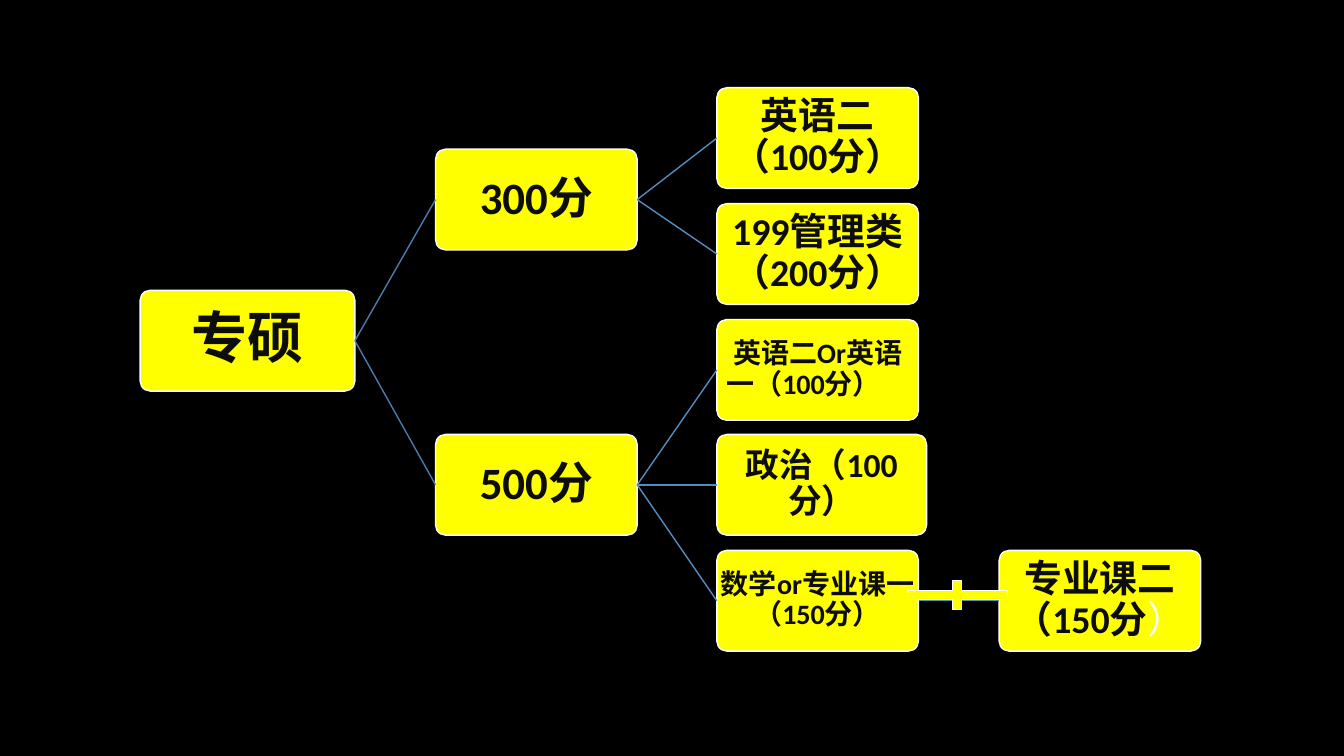
"""Score tree of the professional master's entrance examination."""
from lxml import etree
from pptx import Presentation
from pptx.dml.color import RGBColor
from pptx.enum.shapes import MSO_CONNECTOR, MSO_SHAPE
from pptx.enum.text import MSO_ANCHOR, PP_ALIGN
from pptx.oxml.ns import qn
from pptx.util import Inches, Pt

ROUNDED, PLUS = MSO_SHAPE.ROUNDED_RECTANGLE, MSO_SHAPE.MATH_PLUS
STRAIGHT = MSO_CONNECTOR.STRAIGHT
MIDDLE, CENTER = MSO_ANCHOR.MIDDLE, PP_ALIGN.CENTER
LEFT_SIDE, RIGHT_SIDE = 1, 3

BLACK = RGBColor(0x00, 0x00, 0x00)
INK = RGBColor(0x0D, 0x0D, 0x0D)
WHITE = RGBColor(0xFF, 0xFF, 0xFF)
YELLOW = RGBColor(0xFF, 0xFF, 0x00)
DARK_BLUE = RGBColor(0x49, 0x7C, 0xAB)
BLUE = RGBColor(0x53, 0x8D, 0xC1)

COLUMNS = [1.39, 4.32, 7.11, 9.91]
BOX_HEIGHT = 1


def add_yellow_shape(kind, left, top, width, height, line_width):
    sp = slide.shapes.add_shape(
        kind, Inches(left), Inches(top), Inches(width), Inches(height))
    sp.shadow.inherit = False
    sp.fill.solid()
    sp.fill.fore_color.rgb = YELLOW
    sp.line.color.rgb = WHITE
    sp.line.width = Pt(line_width)
    return sp


def add_text(p, text, size, color=INK, bold=True):
    r = p.add_run()
    r.text = text
    r.font.name = "Calibri"
    r.font.size = Pt(size)
    r.font.bold = bold
    r.font.color.rgb = color


prs = Presentation()
prs.slide_width, prs.slide_height = Inches(13.33), Inches(7.5)
slide = prs.slides.add_slide(prs.slide_layouts[6])
slide.background.fill.solid()
slide.background.fill.fore_color.rgb = BLACK

# name: column, top, width, text, size, inset
nodes = {
    "root": (0, 2.88, 2.13, "专硕", 40, 0.03),
    "300": (1, 1.48, 2, "300分", 32, 0.02),
    "english": (2, 0.87, 2, "英语二（100分）", 27, 0.02),
    "management": (2, 2.02, 2, "199管理类（200分）", 27, 0.02),
    "500": (1, 4.31, 2, "500分", 32, 0.02),
    "either english": (2, 3.17, 2, "英语二Or英语一（100分）", 20, 0.01),
    "politics": (2, 4.31, 2.08, "政治（100分）", 24, 0.02),
    "maths": (2, 5.46, 2, "数学or专业课一（150分）", 20, 0.01),
    "second course": (3, 5.46, 2, "专业课二（150分", 27, 0.02),
}
boxes = {}
for name, (column, top, width, text, size, inset) in nodes.items():
    sp = add_yellow_shape(ROUNDED, COLUMNS[column], top, width, BOX_HEIGHT, 1)
    sp.adjustments[0] = 0.1
    tf = sp.text_frame
    tf.word_wrap = True
    tf.vertical_anchor = MIDDLE
    tf.margin_left = tf.margin_right = Inches(inset)
    tf.margin_top = tf.margin_bottom = Inches(inset)
    p = tf.paragraphs[0]
    p.alignment = CENTER
    p.line_spacing = 0.9
    add_text(p, text, size)
    boxes[name] = sp
add_text(boxes["either english"].text_frame.paragraphs[0], "）", 20,
         color=YELLOW)
add_text(boxes["second course"].text_frame.paragraphs[0], "）", 27,
         color=WHITE, bold=False)

branches = {
    "root": ["300", "500"],
    "300": ["english", "management"],
    "500": ["either english", "politics", "maths"],
    "maths": ["second course"],
}
for parent, children in branches.items():
    for child in children:
        link = slide.shapes.add_connector(STRAIGHT, 0, 0, 0, 0)
        link.begin_connect(boxes[parent], RIGHT_SIDE)
        link.end_connect(boxes[child], LEFT_SIDE)
        link.line.color.rgb = DARK_BLUE if parent == "root" else BLUE
        link.line.width = Pt(1)
        etree.SubElement(link._element.spPr, qn("a:effectLst"))

add_yellow_shape(PLUS, 8.82, 5.71, 1.35, 0.39, 0.75)

prs.save("out.pptx")
